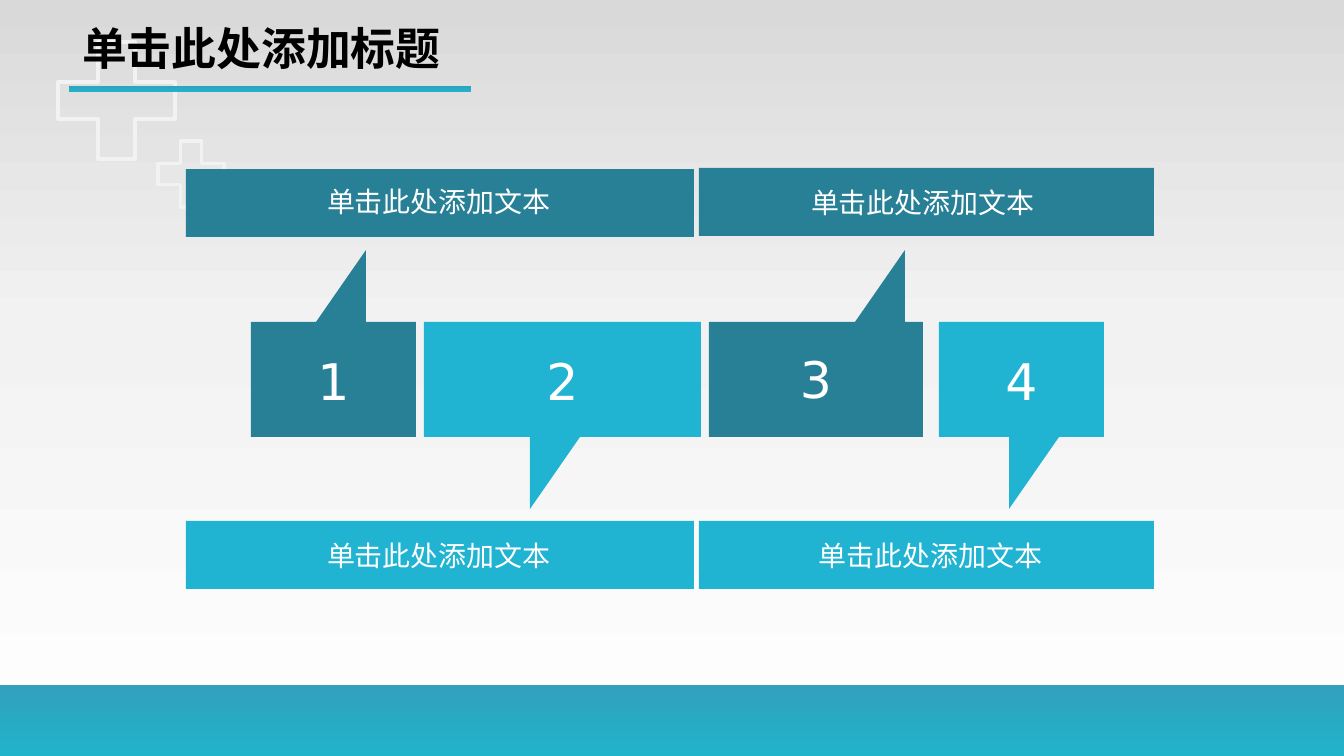
from copy import deepcopy

from pptx import Presentation
from pptx.dml.color import RGBColor
from pptx.enum.shapes import MSO_SHAPE
from pptx.enum.text import MSO_ANCHOR, MSO_AUTO_SIZE, PP_ALIGN
from pptx.oxml.ns import qn
from pptx.util import Pt

RECT, PLUS, TAIL = MSO_SHAPE.RECTANGLE, MSO_SHAPE.MATH_PLUS, MSO_SHAPE.RIGHT_TRIANGLE
LEFT, CENTER = PP_ALIGN.LEFT, PP_ALIGN.CENTER
MIDDLE, TOP = MSO_ANCHOR.MIDDLE, MSO_ANCHOR.TOP
GROW, FIXED = MSO_AUTO_SIZE.SHAPE_TO_FIT_TEXT, MSO_AUTO_SIZE.NONE

WIDE, HIGH = 1344, 756
SCALE = 9144000 / WIDE  # EMU in one px
FONT = "DejaVu Sans"

BLACK = RGBColor(0x00, 0x00, 0x00)
WHITE = RGBColor(0xFF, 0xFF, 0xFF)
SILVER = RGBColor(0xD9, 0xD9, 0xD9)
PALE = RGBColor(0xF2, 0xF2, 0xF2)
BLUE = RGBColor(0x31, 0xA1, 0xBD)
AQUA = RGBColor(0x20, 0xB3, 0xC9)
DARK = RGBColor(0x27, 0x80, 0x95)
LIGHT = RGBColor(0x20, 0xB3, 0xD2)

# Content
TITLE = "单击此处添加标题"
LABEL = "单击此处添加文本"
BACK = [(0, SILVER), (0.43, PALE), (1, WHITE)]
BAND = [(0, BLUE), (1, AQUA)]
PLUSES = [(37, 21, 159), (146, 129, 90)]  # left, top, side
# bar left, top, width, label left, label top, colour
BARS = [
    (186, 169, 508, 220, 180, DARK),
    (699, 168, 455, 704, 181, DARK),
    (186, 521, 508, 220, 534, LIGHT),
    (699, 521, 455, 712, 534, LIGHT),
]
# number, box left, width, digit top, tail left, tail points up
STEPS = [
    ("1", 251, 165, 339, 316, True),
    ("2", 424, 277, 339, 530, False),
    ("3", 709, 214, 337, 855, True),
    ("4", 939, 165, 339, 1009, False),
]
BAR_H, LABEL_W, LABEL_H = 68, 438, 44
BOX_TOP, BOX_H = 322, 115
TAIL_W, TAIL_H = 50, 72
DIGIT_W, DIGIT_H = 64, 82


def px(*sizes):
    return [round(size * SCALE) for size in sizes]


prs = Presentation()
prs.slide_width, prs.slide_height = px(WIDE, HIGH)
slide = prs.slides.add_slide(prs.slide_layouts[5])
shapes = slide.shapes


def draw(kind, left, top, width, height, fill=None):
    shape = shapes.add_shape(kind, *px(left, top, width, height))
    shape.shadow.inherit = False
    shape.line.fill.background()
    if fill is None:
        shape.fill.background()
    else:
        shape.fill.solid()
        shape.fill.fore_color.rgb = fill
    return shape


def blend(shape, stops):
    """Fill from top to bottom with the given colour stops."""
    fill = shape.fill
    fill.gradient()
    fill.gradient_angle = 270
    marks = shape._element.spPr.find(qn("a:gradFill")).find(qn("a:gsLst"))
    for _ in stops[2:]:
        marks.append(deepcopy(marks[0]))
    for mark, (place, color) in zip(fill.gradient_stops, stops):
        mark.position = place
        mark.color.rgb = color


def write(shape, text, size=15, color=WHITE, bold=False, align=CENTER,
          anchor=TOP, fit=GROW, inset=(11, 5)):
    frame = shape.text_frame
    frame.word_wrap = True
    frame.auto_size = fit
    frame.vertical_anchor = anchor
    side, edge = px(*inset)
    frame.margin_left = frame.margin_right = side
    frame.margin_top = frame.margin_bottom = edge
    para = frame.paragraphs[0]
    para.alignment = align
    run = para.add_run()
    run.text = text
    font = run.font
    font.name, font.size, font.bold = FONT, Pt(size), bold
    font.color.rgb = color


def note(text, left, top, width, height, **style):
    write(shapes.add_textbox(*px(left, top, width, height)), text, **style)


# Backdrop, crosses, footer band and title rule
blend(draw(RECT, 0, 0, WIDE, HIGH), BACK)
for left, top, side in PLUSES:
    cross = draw(PLUS, left, top, side, side)
    cross.line.color.rgb = PALE
    cross.line.width = Pt(2)
blend(draw(RECT, 0, 685, WIDE, HIGH - 685), BAND)
blend(draw(RECT, 69, 86, 402, 6), BAND)

# Title, brought in front of the backdrop
title = shapes.title
title.left, title.top, title.width, title.height = px(69, 14, 625, 67)
write(title, TITLE, size=24, color=BLACK, bold=True, align=LEFT,
      anchor=MIDDLE, fit=FIXED, inset=(13, 7))
shapes._spTree.append(title._element)

# Text bars
for left, top, width, text_x, text_y, color in BARS:
    draw(RECT, left, top, width, BAR_H, color)
    note(LABEL, text_x, text_y, LABEL_W, LABEL_H)

# Numbered boxes with pointed tails
for number, left, width, text_y, tail_x, rising in STEPS:
    color = DARK if rising else LIGHT
    tail_y = BOX_TOP - TAIL_H if rising else BOX_TOP + BOX_H
    tail = draw(TAIL, tail_x, tail_y, TAIL_W, TAIL_H, color)
    tail._element.spPr.find(qn("a:xfrm")).set("flipH" if rising else "flipV", "1")
    draw(RECT, left, BOX_TOP, width, BOX_H, color)
    note(number, left + (width - DIGIT_W) / 2, text_y, DIGIT_W, DIGIT_H,
         size=27, inset=(11, 11))

prs.save("out.pptx")
